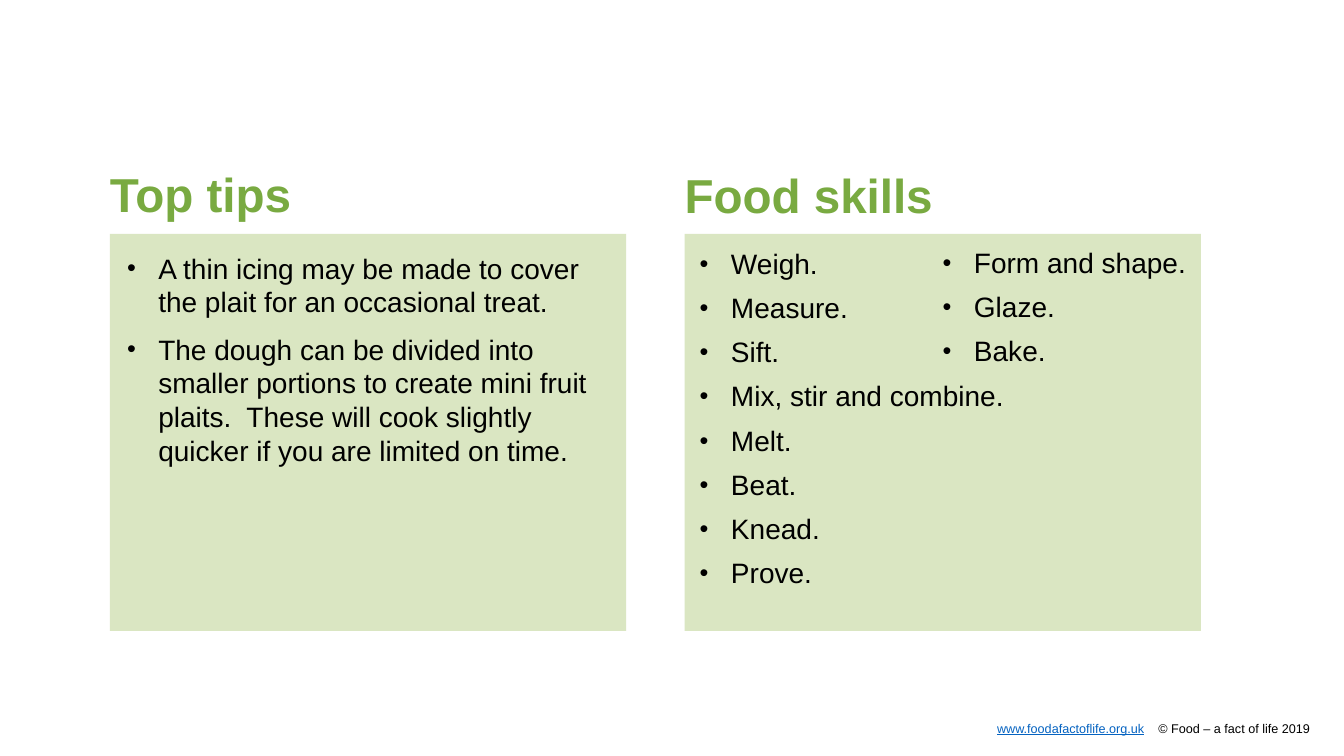
from lxml.etree import SubElement
from pptx import Presentation
from pptx.dml.color import RGBColor
from pptx.enum.shapes import MSO_SHAPE
from pptx.enum.text import MSO_ANCHOR, MSO_AUTO_SIZE, PP_ALIGN
from pptx.oxml.ns import qn
from pptx.util import Inches, Pt

# Content
TIPS_TITLE = "Top tips"
TIPS = [
    "A thin icing may be made to cover the plait for an occasional treat.",
    "The dough can be divided into smaller portions to create mini fruit plaits.  "
    "These will cook slightly quicker if you are limited on time.",
]
SKILLS_TITLE = "Food skills"
SKILLS_LEFT = ["Weigh.", "Measure.", "Sift.", "Mix, stir and combine.",
               "Melt.", "Beat.", "Knead.", "Prove."]
SKILLS_RIGHT = ["Form and shape.", "Glaze.", "Bake."]
WEBSITE = "www.foodafactoflife.org.uk"
COPYRIGHT = "© Food – a fact of life 2019"

COLORS = {"heading": "79AA41", "panel": "DAE6C2", "text": "000000", "link": "0563C1"}
FONT = "Arial"

# Layout in inches
TIPS_X, SKILLS_X = 1.09, 6.79
PANEL_Y, PANEL_W, PANEL_H = 2.32, 5.12, 3.94
HEADING_W, HEADING_H = 10.63, 0.79
LIST_W = 4.78
INDENT = Inches(0.31)
FOOTER_TABS = (8.63, 10.23)


def place(box, x, y, w, h):
    box.left, box.top, box.width, box.height = map(Inches, (x, y, w, h))
    frame = box.text_frame
    frame.margin_left = frame.margin_top = frame.margin_right = frame.margin_bottom = 0
    frame.word_wrap = True
    frame.auto_size = MSO_AUTO_SIZE.NONE
    frame.vertical_anchor = MSO_ANCHOR.TOP
    return frame


def add_run(paragraph, text, size, color, bold=False, underline=False):
    run = paragraph.add_run()
    run.text = text
    font = run.font
    font.name, font.size, font.bold, font.underline = FONT, Pt(size), bold, underline
    font.color.rgb = RGBColor.from_string(COLORS[color])


def write_heading(box, text, x, y):
    paragraph = place(box, x, y, HEADING_W, HEADING_H).paragraphs[0]
    paragraph.alignment = PP_ALIGN.LEFT
    paragraph.line_spacing = 0.9
    add_run(paragraph, text, 34, "heading", bold=True)


def write_list(box, items, x, y, line_spacing=0.9):
    frame = place(box, x, y, LIST_W, PANEL_H)
    for i, item in enumerate(items):
        paragraph = frame.paragraphs[0] if i == 0 else frame.add_paragraph()
        props = paragraph._p.get_or_add_pPr()
        props.set("marL", str(INDENT))
        props.set("indent", str(-INDENT))
        SubElement(props, qn("a:buSzPct"), val="90000")
        SubElement(props, qn("a:buFont"), typeface=FONT)
        SubElement(props, qn("a:buChar"), char="•")
        paragraph.alignment = PP_ALIGN.LEFT
        paragraph.line_spacing = line_spacing
        paragraph.space_before = Pt(10 if i else 0)
        add_run(paragraph, item, 20, "text")


prs = Presentation()
prs.slide_width, prs.slide_height = Inches(13.33), Inches(7.5)
slide = prs.slides.add_slide(prs.slide_layouts[0])


def new_box():
    return slide.shapes.add_textbox(0, 0, 0, 0)


# Green panels, moved behind the placeholders
for position, x in enumerate((TIPS_X, SKILLS_X)):
    panel = slide.shapes.add_shape(MSO_SHAPE.RECTANGLE, Inches(x), Inches(PANEL_Y),
                                   Inches(PANEL_W), Inches(PANEL_H))
    panel.shadow.inherit = False
    panel.fill.solid()
    panel.fill.fore_color.rgb = RGBColor.from_string(COLORS["panel"])
    panel.line.fill.background()
    slide.shapes._spTree.insert(2 + position, panel._element)

# Tips
write_heading(slide.shapes.title, TIPS_TITLE, TIPS_X, 1.7)
write_list(slide.placeholders[1], TIPS, 1.26, 2.49, line_spacing=1.0)

# Food skills
write_heading(new_box(), SKILLS_TITLE, SKILLS_X, 1.71)
write_list(new_box(), SKILLS_LEFT, 6.94, 2.48)
write_list(new_box(), SKILLS_RIGHT, 9.35, 2.47)

# Footer, with room to spare after the copyright line
footer = place(new_box(), 1.26, 7.15, 11.9, 0.15).paragraphs[0]
tabs = SubElement(footer._p.get_or_add_pPr(), qn("a:tabLst"))
for stop in FOOTER_TABS:
    SubElement(tabs, qn("a:tab"), pos=str(Inches(stop)), algn="l")
add_run(footer, "\t", 9, "text")
add_run(footer, WEBSITE, 9, "link", underline=True)
add_run(footer, "\t" + COPYRIGHT, 9, "text")

prs.save("out.pptx")
